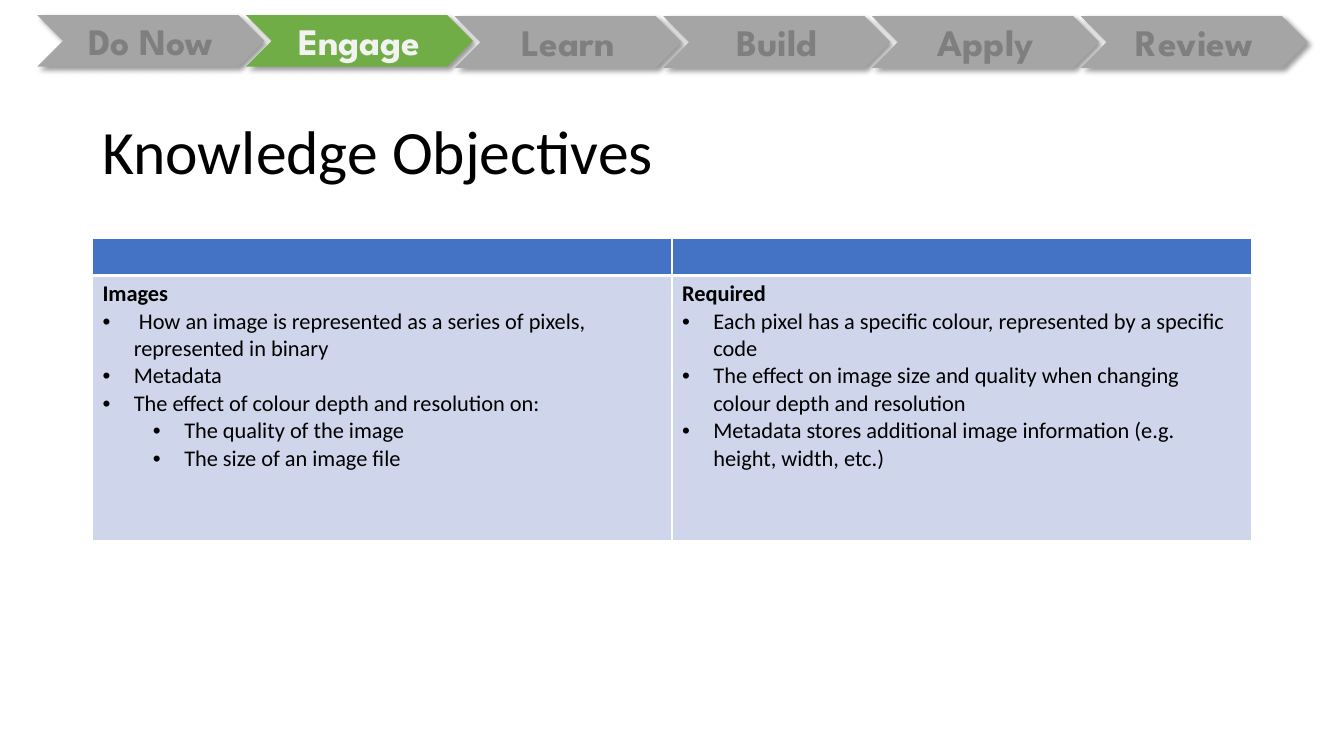
from lxml import etree
from pptx import Presentation
from pptx.dml.color import RGBColor
from pptx.enum.shapes import MSO_SHAPE
from pptx.enum.text import MSO_ANCHOR, PP_ALIGN
from pptx.oxml import parse_xml
from pptx.oxml.ns import nsdecls, qn
from pptx.util import Cm, Pt

CHEVRON = MSO_SHAPE.CHEVRON
MIDDLE = MSO_ANCHOR.MIDDLE
CENTER = PP_ALIGN.CENTER

BLACK = RGBColor(0x00, 0x00, 0x00)
GREY = RGBColor(0xA5, 0xA5, 0xA5)
DARK_GREY = RGBColor(0x7F, 0x7F, 0x7F)
GREEN = RGBColor(0x70, 0xAD, 0x47)
OFF_WHITE = RGBColor(0xF2, 0xF2, 0xF2)
BLUE = RGBColor(0x44, 0x72, 0xC4)
PALE_BLUE = RGBColor(0xCF, 0xD5, 0xEA)

STEP_FONT = {"name": "League Spartan", "size": Pt(26.7), "bold": True}
TITLE_FONT = {"name": "Calibri", "size": Pt(44)}
BODY_FONT = {"name": "Calibri", "size": Pt(16)}

SHADOW = (
    f'<a:effectLst {nsdecls("a")}>'
    f'<a:outerShdw blurRad="{Pt(4)}" dist="{Pt(3)}" dir="2700000" algn="tl" rotWithShape="0">'
    '<a:srgbClr val="000000"><a:alpha val="40000"/></a:srgbClr>'
    "</a:outerShdw></a:effectLst>"
)


def style_font(font, formats, color):
    for name, value in formats.items():
        setattr(font, name, value)
    font.color.rgb = color


def style_cell(cell, color, top, bottom):
    """Fill a cell and give it white borders; widths are in points."""
    properties = cell._tc.get_or_add_tcPr()
    for side, width in (("L", 1), ("R", 1), ("T", top), ("B", bottom)):
        properties.append(parse_xml(
            f'<a:ln{side} {nsdecls("a")} w="{Pt(width)}"><a:solidFill>'
            f'<a:srgbClr val="FFFFFF"/></a:solidFill></a:ln{side}>'))
    cell.fill.solid()
    cell.fill.fore_color.rgb = color


presentation = Presentation()
presentation.slide_width = Cm(33.87)
presentation.slide_height = Cm(19.05)
slide = presentation.slides.add_slide(presentation.slide_layouts[6])

# Lesson steps, with the current one in green
steps = ["Do Now", "Engage", "Learn", "Build", "Apply", "Review"]
current_step = "Engage"
for index, step in enumerate(steps):
    top = Cm(0.38) if index < 2 else Cm(0.41)
    shape = slide.shapes.add_shape(
        CHEVRON, Cm(0.94 + 5.26 * index), top, Cm(5.72), Cm(1.3))
    shape.fill.solid()
    shape.fill.fore_color.rgb = GREEN if step == current_step else GREY
    shape.line.fill.background()
    shape._element.spPr.append(parse_xml(SHADOW))
    shape.text_frame.vertical_anchor = MIDDLE
    paragraph = shape.text_frame.paragraphs[0]
    paragraph.alignment = CENTER
    run = paragraph.add_run()
    run.text = step
    style_font(run.font, STEP_FONT, OFF_WHITE if step == current_step else DARK_GREY)

# Title
title = slide.shapes.add_textbox(Cm(2.33), Cm(2.06), Cm(29.21), Cm(3.68))
title.text_frame.word_wrap = True
title.text_frame.vertical_anchor = MIDDLE
paragraph = title.text_frame.paragraphs[0]
paragraph.line_spacing = 0.9
run = paragraph.add_run()
run.text = "Knowledge Objectives"
style_font(run.font, TITLE_FONT, BLACK)

# Objectives: heading and (level, text) bullets for each column
objectives = [
    ("Images", [
        (0, " How an image is represented as a series of pixels, represented in binary"),
        (0, "Metadata"),
        (0, "The effect of colour depth and resolution on:"),
        (1, "The quality of the image"),
        (1, "The size of an image file"),
    ]),
    ("Required", [
        (0, "Each pixel has a specific colour, represented by a specific code"),
        (0, "The effect on image size and quality when changing colour depth and resolution"),
        (0, "Metadata stores additional image information (e.g. height, width, etc.)"),
    ]),
]
table = slide.shapes.add_table(2, 2, Cm(2.33), Cm(6), Cm(29.21), Cm(7.62)).table
table.rows[0].height = Cm(0.94)
table.rows[1].height = Cm(6.68)

for column, (heading, bullets) in enumerate(objectives):
    header = table.cell(0, column)
    style_cell(header, BLUE, 1, 3)
    # The empty header takes its height from the body text size
    end = etree.SubElement(header.text_frame.paragraphs[0]._p, qn("a:endParaRPr"))
    end.set("sz", "1600")

    body = table.cell(1, column)
    style_cell(body, PALE_BLUE, 3, 1)
    paragraph = body.text_frame.paragraphs[0]
    run = paragraph.add_run()
    run.text = heading
    style_font(run.font, BODY_FONT, BLACK)
    run.font.bold = True
    for level, text in bullets:
        paragraph = body.text_frame.add_paragraph()
        paragraph.level = level
        properties = paragraph._p.get_or_add_pPr()
        properties.set("marL", str(Cm(0.79 + 1.27 * level)))
        properties.set("indent", str(-Cm(0.79)))
        etree.SubElement(properties, qn("a:buFont")).set("typeface", "Arial")
        etree.SubElement(properties, qn("a:buChar")).set("char", "•")
        run = paragraph.add_run()
        run.text = text
        style_font(run.font, BODY_FONT, BLACK)

presentation.save("out.pptx")
